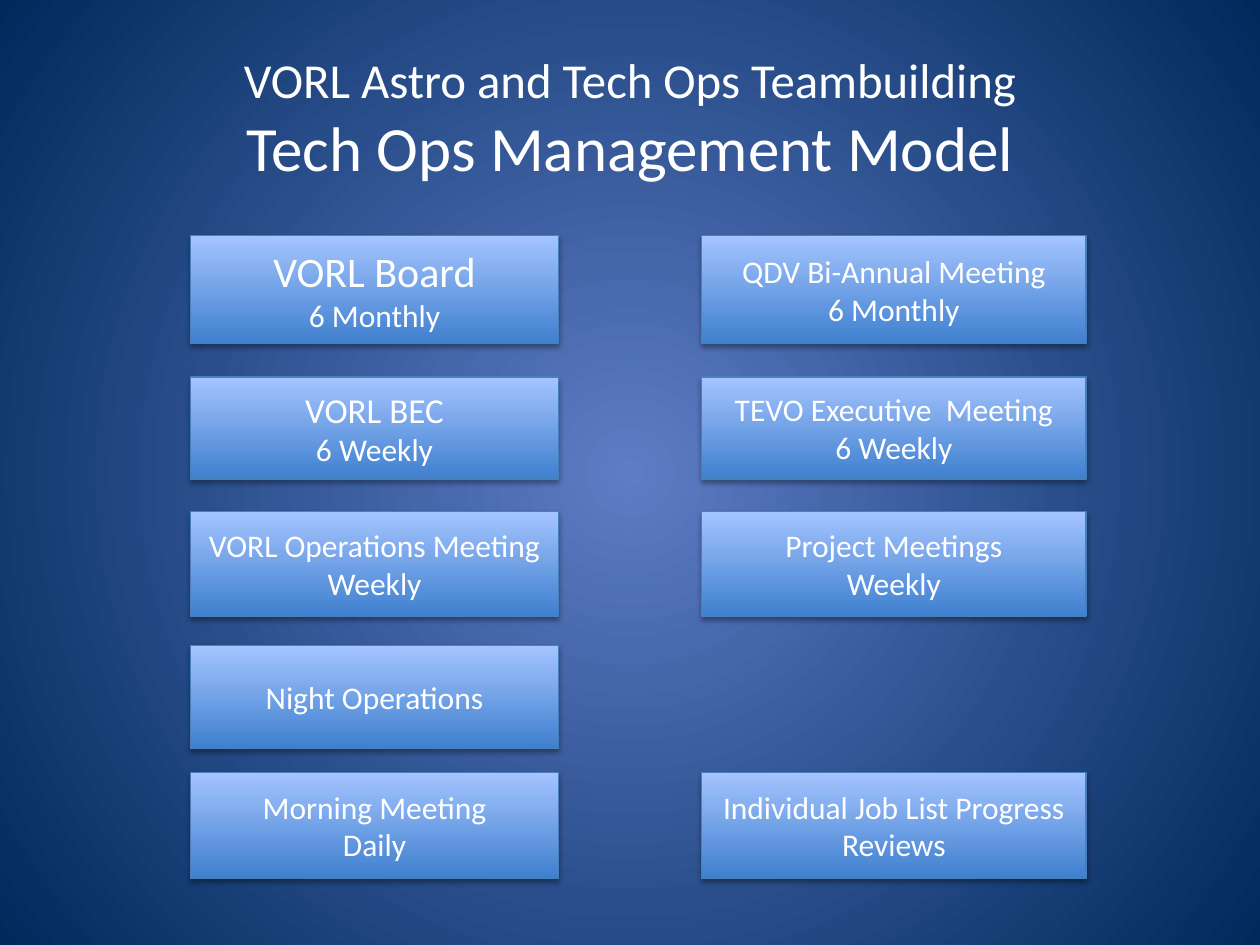
from typing import NamedTuple

from lxml.etree import SubElement
from pptx import Presentation
from pptx.dml.color import RGBColor
from pptx.enum.shapes import MSO_SHAPE
from pptx.enum.text import MSO_ANCHOR, MSO_AUTO_SIZE, PP_ALIGN
from pptx.oxml.ns import qn
from pptx.util import Pt

RECT = MSO_SHAPE.RECTANGLE
MIDDLE = MSO_ANCHOR.MIDDLE
CENTER = PP_ALIGN.CENTER
FIXED = MSO_AUTO_SIZE.NONE
WHITE = "FFFFFF"


class Span(NamedTuple):
    start: float
    size: float


class Box(NamedTuple):
    col: int
    row: int
    lines: tuple[str, ...]
    head: float = 18


COLS = (Span(108.8, 210.5), Span(401, 219.6))
ROWS = (
    Span(134.6, 61.8),
    Span(215.5, 58.2),
    Span(292.3, 59.8),
    Span(369, 58.6),
    Span(441.4, 60.5),
)
BOXES = (
    Box(0, 0, ("VORL Board", "6 Monthly"), 24),
    Box(0, 1, ("VORL BEC", "6 Weekly"), 20),
    Box(0, 2, ("VORL Operations Meeting", "Weekly")),
    Box(0, 3, ("Night Operations",)),
    Box(0, 4, ("Morning Meeting", "Daily")),
    Box(1, 0, ("QDV Bi-Annual Meeting", "6 Monthly")),
    Box(1, 1, ("TEVO Executive  Meeting", "6 Weekly")),
    Box(1, 2, ("Project Meetings", "Weekly")),
    Box(1, 4, ("Individual Job List Progress Reviews",)),
)


def color(code: str) -> RGBColor:
    return RGBColor.from_string(code)


def blend(fill, first: str, last: str) -> None:
    fill.gradient()
    for stop, code in zip(fill.gradient_stops, (first, last)):
        stop.color.rgb = color(code)


def write(para, text: str, size: float) -> None:
    para.alignment = CENTER
    run = para.add_run()
    run.text = text
    style = {"name": "Calibri", "size": Pt(size)}
    for key, value in style.items():
        setattr(run.font, key, value)
    run.font.color.rgb = color(WHITE)


def paint(slide) -> None:
    blend(slide.background.fill, "5E7CC5", "00295C")
    grad = slide.element.find(".//" + qn("a:gradFill"))
    grad.remove(grad.find(qn("a:lin")))
    shape = SubElement(grad, qn("a:path"), path="circle")
    SubElement(shape, qn("a:fillToRect"), {side: "50000" for side in "ltrb"})


def shade(shape) -> None:
    shape.shadow.inherit = False
    effects = shape.element.spPr.find(qn("a:effectLst"))
    outer = SubElement(
        effects,
        qn("a:outerShdw"),
        blurRad=str(Pt(3.1)),
        dist=str(Pt(1.8)),
        dir="5400000",
        rotWithShape="0",
    )
    tint = SubElement(outer, qn("a:srgbClr"), val="000000")
    SubElement(tint, qn("a:alpha"), val="35000")


def draw(slide, box: Box) -> None:
    col, row = COLS[box.col], ROWS[box.row]
    shape = slide.shapes.add_shape(
        RECT, Pt(col.start), Pt(row.start), Pt(col.size), Pt(row.size)
    )
    blend(shape.fill, "3F80CE", "A4C4FF")
    shape.fill.gradient_angle = 90
    shape.line.color.rgb = color("4B7EBC")
    shape.line.width = Pt(0.75)
    shade(shape)
    frame = shape.text_frame
    frame.word_wrap = True
    frame.vertical_anchor = MIDDLE
    for i, text in enumerate(box.lines):
        para = frame.add_paragraph() if i else frame.paragraphs[0]
        write(para, text, 18 if i else box.head)


def title(slide) -> None:
    shape = slide.shapes.title
    place = {"left": 36, "top": 21.6, "width": 648, "height": 90}
    for key, value in place.items():
        setattr(shape, key, Pt(value))
    frame = shape.text_frame
    frame.auto_size = FIXED
    frame.vertical_anchor = MIDDLE
    para = frame.paragraphs[0]
    write(para, "VORL Astro and Tech Ops Teambuilding", 27.9)
    para.add_line_break()
    write(para, "Tech Ops Management Model", 36)


def main() -> None:
    deck = Presentation()
    deck.slide_width, deck.slide_height = Pt(720), Pt(540)
    slide = deck.slides.add_slide(deck.slide_layouts[5])
    paint(slide)
    title(slide)
    for box in BOXES:
        draw(slide, box)
    deck.save("out.pptx")


if __name__ == "__main__":
    main()
